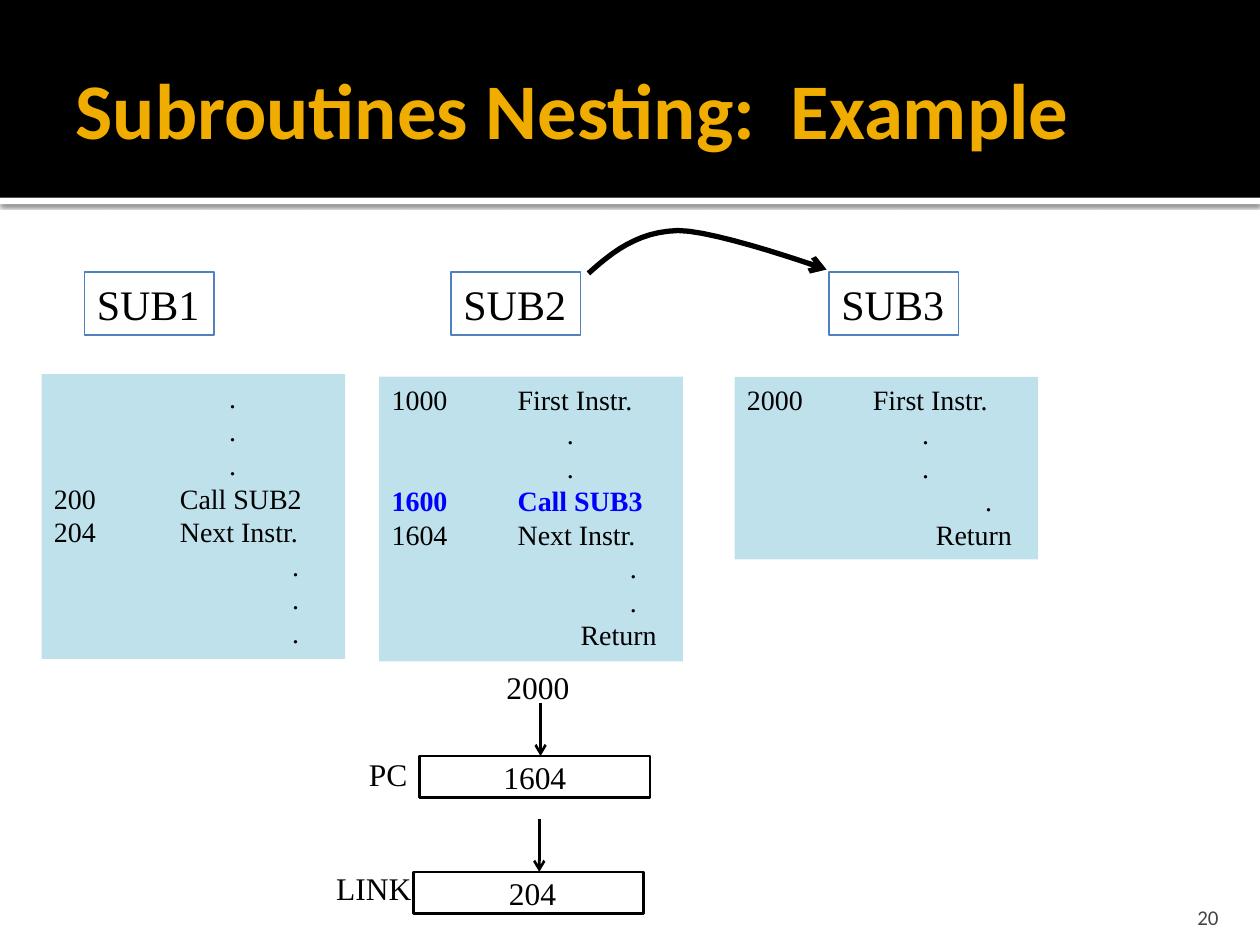
from lxml.etree import SubElement
from pptx import Presentation
from pptx.dml.color import RGBColor
from pptx.enum.shapes import MSO_CONNECTOR, MSO_SHAPE
from pptx.enum.text import MSO_ANCHOR, MSO_AUTO_SIZE, PP_ALIGN
from pptx.oxml.ns import qn
from pptx.util import Inches, Pt

BLACK = RGBColor(0x00, 0x00, 0x00)
WHITE = RGBColor(0xFF, 0xFF, 0xFF)
AMBER = RGBColor(0xF0, 0xAD, 0x00)
GRAY = RGBColor(0x45, 0x45, 0x45)
STEEL = RGBColor(0x4F, 0x81, 0xBD)
PALE = RGBColor(0xBF, 0xE1, 0xEB)
BLUE = RGBColor(0x00, 0x00, 0xFF)
SERIF = "Times New Roman"

# Content: code lines are (text, left indent in inches)
TITLE = "Subroutines Nesting:  Example"
DOT, LOW_DOT, RETURN = (".", 1.39), (".", 1.89), ("Return", 1.5)
CURRENT = "1600\tCall SUB3"
LABELS = [("SUB1", 0.67), ("SUB2", 3.58), ("SUB3", 6.58)]
LISTINGS = [
    ((0.33, 2.97, 2.41, 2.26),
     [DOT] * 3 + [("200\tCall SUB2", 0), ("204\tNext Instr.", 0)] + [LOW_DOT] * 3),
    ((3.01, 2.99, 2.41, 2.26),
     [("1000\tFirst Instr.", 0), DOT, DOT, (CURRENT, 0), ("1604\tNext Instr.", 0),
      LOW_DOT, LOW_DOT, RETURN]),
    ((5.83, 2.99, 2.41, 1.45),
     [("2000\tFirst Instr.", 0), DOT, DOT, LOW_DOT, RETURN]),
]
REGISTERS = [("1604", 3.33, 6.0), (" 204", 3.28, 6.92)]
NOTES = [("2000", 3.92, 5.25, 0.71), ("PC", 2.83, 5.94, 0.51), ("LINK", 2.57, 6.85, 0.81)]
ARROWS = [(4.29, 5.58, 6.0), (4.28, 6.5, 6.92)]
CURVE = [
    [(4.67, 2.17), (4.86, 2.0), (5.06, 1.84), (5.38, 1.83)],
    [(5.38, 1.83), (5.69, 1.83), (6.56, 2.14), (6.56, 2.14)],
]
STEPS = 12


def style(p, size, color=BLACK, font=SERIF, bold=False):
    for r in p.runs:
        r.font.size, r.font.name, r.font.bold = Pt(size), font, bold
        r.font.color.rgb = color


def add_box(s, box, fill=None, line=None, width=0.75):
    sp = s.shapes.add_shape(MSO_SHAPE.RECTANGLE, *map(Inches, box))
    sp.shadow.inherit = False
    if fill is None:
        sp.fill.background()
    else:
        sp.fill.solid()
        sp.fill.fore_color.rgb = fill
    if line is None:
        sp.line.fill.background()
    else:
        sp.line.color.rgb = line
        sp.line.width = Pt(width)
    tf = sp.text_frame
    tf.vertical_anchor = MSO_ANCHOR.TOP
    tf.paragraphs[0].alignment = PP_ALIGN.LEFT
    return sp


def add_text(s, text, box, size, **kw):
    tf = s.shapes.add_textbox(*map(Inches, box)).text_frame
    tf.text = text
    style(tf.paragraphs[0], size, **kw)
    return tf


def add_arrowhead(sp, width):
    sp.line.color.rgb = BLACK
    sp.line.width = Pt(width)
    SubElement(sp.element.spPr.find(qn("a:ln")), qn("a:tailEnd"), type="arrow")


def bezier(points, t):
    weights = ((1 - t) ** 3, 3 * t * (1 - t) ** 2, 3 * t * t * (1 - t), t ** 3)
    return tuple(Inches(sum(w * p[i] for w, p in zip(weights, points))) for i in (0, 1))


prs = Presentation()
prs.slide_width, prs.slide_height = Inches(10), Inches(7.5)
s = prs.slides.add_slide(prs.slide_layouts[5])

# Header bands, the white one with a soft shadow
band = add_box(s, (0, 1.57, 10, 0.05), WHITE)
effects = band.element.spPr.find(qn("a:effectLst"))
shadow = SubElement(effects, qn("a:outerShdw"), blurRad=str(Pt(2.5)),
                    dist=str(Pt(0.8)), dir="5400000", rotWithShape="0")
color = SubElement(shadow, qn("a:srgbClr"), val=str(BLACK))
SubElement(color, qn("a:alpha"), val="60000")
add_box(s, (0, 0, 10, 1.57), BLACK)

# Title, brought in front of the bands
title = s.shapes.title
title.left, title.top, title.width, title.height = map(Inches, (0.5, 0.17, 9, 1.37))
s.shapes.element.append(title.element)
tf = title.text_frame
tf.text = TITLE
tf.vertical_anchor = MSO_ANCHOR.MIDDLE
tf.auto_size = MSO_AUTO_SIZE.NONE
tf.margin_right = Inches(0.05)
tf.paragraphs[0].alignment = PP_ALIGN.LEFT
style(tf.paragraphs[0], 45, AMBER, "Calibri", True)

# Slide number
tf = add_text(s, "20", (8.97, 7.08, 0.8, 0.3), 12, color=GRAY, font="Calibri")
tf.word_wrap = True
tf.margin_bottom = 0
tf.vertical_anchor = MSO_ANCHOR.BOTTOM
tf.paragraphs[0].alignment = PP_ALIGN.RIGHT

# Subroutine labels
for text, x in LABELS:
    tf = add_box(s, (x, 2.16, 1.03, 0.5), line=STEEL).text_frame
    tf.text = text
    style(tf.paragraphs[0], 24)

# Code listings
for box, lines in LISTINGS:
    tf = add_box(s, box, PALE).text_frame
    tf.text = "\n".join(text for text, _ in lines)
    for p, (text, indent) in zip(tf.paragraphs, lines):
        p.alignment = PP_ALIGN.LEFT
        pPr = p._p.get_or_add_pPr()
        pPr.set("marL", str(Inches(indent)))
        if "\t" in text:
            tabs = SubElement(pPr, qn("a:tabLst"))
            SubElement(tabs, qn("a:tab"), pos=str(Inches(1)), algn="l")
        current = text == CURRENT
        style(p, 16, BLUE if current else BLACK, bold=current)

# Curved call arrow from SUB2 to SUB3
points = [bezier(seg, i / STEPS) for seg in CURVE for i in range(1, STEPS + 1)]
builder = s.shapes.build_freeform(*bezier(CURVE[0], 0))
builder.add_line_segments(points, close=False)
sp = builder.convert_to_shape()
sp.shadow.inherit = False
sp.fill.background()
add_arrowhead(sp, 3)

# Registers with their names and the incoming value
for text, x, y in REGISTERS:
    tf = add_box(s, (x, y, 1.83, 0.33), line=BLACK, width=1.5).text_frame
    tf.text = text
    tf.vertical_anchor = MSO_ANCHOR.MIDDLE
    tf.paragraphs[0].alignment = PP_ALIGN.CENTER
    style(tf.paragraphs[0], 18)
for text, x, y, w in NOTES:
    add_text(s, text, (x, y, w, 0.4), 18).word_wrap = False

# Arrows into the registers
for x, y1, y2 in ARROWS:
    c = s.shapes.add_connector(MSO_CONNECTOR.STRAIGHT, *map(Inches, (x, y1, x, y2)))
    add_arrowhead(c, 1.5)
    SubElement(c.element.spPr, qn("a:effectLst"))

prs.save("out.pptx")
